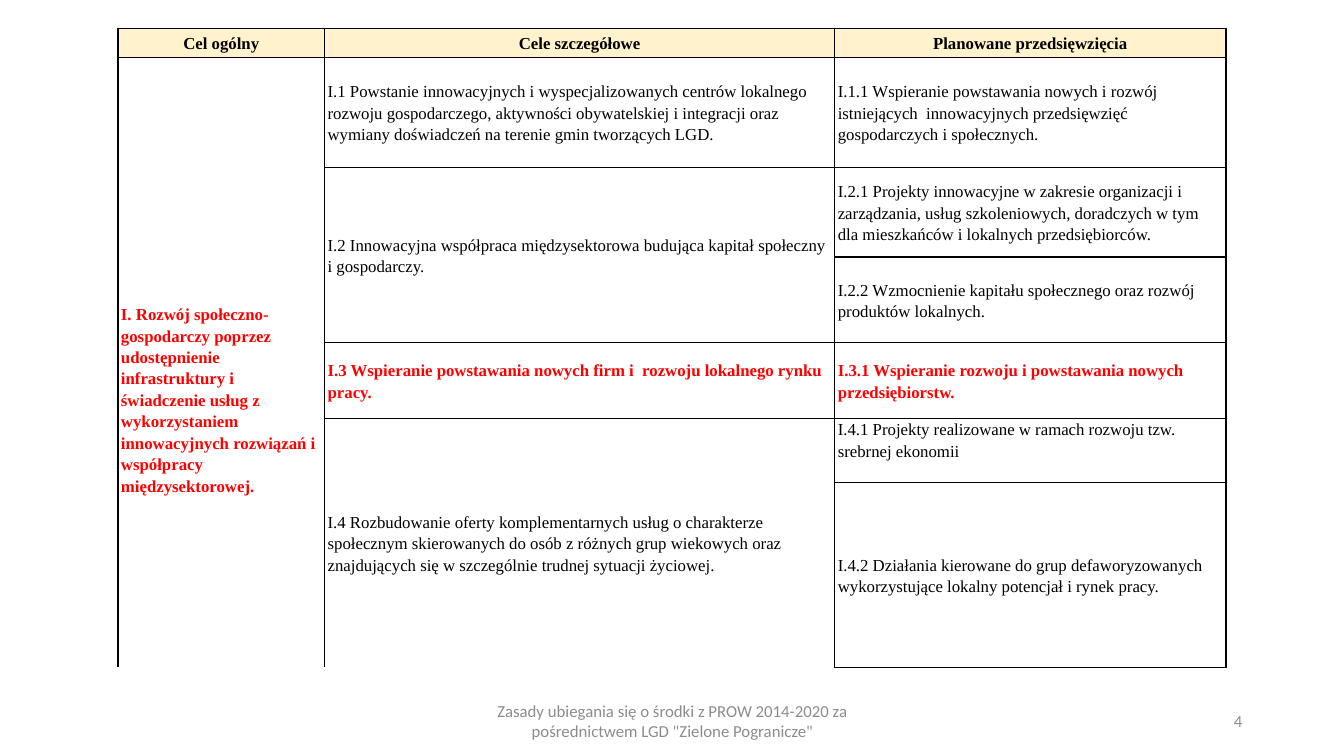
from dataclasses import dataclass

from lxml import etree
from pptx import Presentation
from pptx.dml.color import RGBColor
from pptx.enum.text import MSO_ANCHOR, PP_ALIGN
from pptx.oxml.ns import qn
from pptx.util import Inches, Pt

LEFT, CENTER, RIGHT = PP_ALIGN.LEFT, PP_ALIGN.CENTER, PP_ALIGN.RIGHT
TOP, MIDDLE, BOTTOM = MSO_ANCHOR.TOP, MSO_ANCHOR.MIDDLE, MSO_ANCHOR.BOTTOM


@dataclass(frozen=True)
class Theme:
    ink: str = "000000"
    accent: str = "FF0000"
    muted: str = "8C8C8C"
    head: str = "FFF2CC"
    body: str = "Times New Roman"
    foot: str = "Calibri"
    size: int = 12
    rule: int = 1
    leading: float = 1.15


THEME = Theme()
COLS = [2.05, 5.06, 3.88]
ROWS = [0.29, 1.09, 0.89, 0.85, 0.75, 0.64, 1.83]
ACCENTS = {(1, 0), (4, 1), (4, 2)}
ANCHORS = {(1, 0): BOTTOM, (5, 2): TOP}
GOAL_PAD = 1.7

# None continues the cell above it
GOALS = [
    ["Cel ogólny", "Cele szczegółowe", "Planowane przedsięwzięcia"],
    ["I. Rozwój społeczno-gospodarczy poprzez udostępnienie infrastruktury i "
     "świadczenie usług z wykorzystaniem innowacyjnych rozwiązań i współpracy "
     "międzysektorowej.",
     "I.1 Powstanie innowacyjnych i wyspecjalizowanych centrów lokalnego rozwoju "
     "gospodarczego, aktywności obywatelskiej i integracji oraz wymiany doświadczeń "
     "na terenie gmin tworzących LGD.",
     "I.1.1 Wspieranie powstawania nowych i rozwój istniejących  innowacyjnych "
     "przedsięwzięć gospodarczych i społecznych."],
    [None,
     "I.2 Innowacyjna współpraca międzysektorowa budująca kapitał społeczny i "
     "gospodarczy.",
     "I.2.1 Projekty innowacyjne w zakresie organizacji i zarządzania, usług "
     "szkoleniowych, doradczych w tym dla mieszkańców i lokalnych przedsiębiorców."],
    [None, None,
     "I.2.2 Wzmocnienie kapitału społecznego oraz rozwój produktów lokalnych."],
    [None,
     "I.3 Wspieranie powstawania nowych firm i  rozwoju lokalnego rynku pracy.",
     "I.3.1 Wspieranie rozwoju i powstawania nowych przedsiębiorstw."],
    [None,
     "I.4 Rozbudowanie oferty komplementarnych usług o charakterze społecznym "
     "skierowanych do osób z różnych grup wiekowych oraz znajdujących się w "
     "szczególnie trudnej sytuacji życiowej.",
     "I.4.1 Projekty realizowane w ramach rozwoju tzw. srebrnej ekonomii"],
    [None, None,
     "I.4.2 Działania kierowane do grup defaworyzowanych wykorzystujące lokalny "
     "potencjał i rynek pracy."],
]
FOOTER = ('Zasady ubiegania się o środki z PROW 2014-2020 za pośrednictwem '
          'LGD "Zielone Pogranicze"')


def apply(item, values):
    for name, value in values.items():
        setattr(item, name, value)


def write(frame, text, font, color, align, bold=False, leading=1.0):
    para = frame.paragraphs[0]
    apply(para, {"alignment": align, "line_spacing": leading})
    run = para.add_run()
    run.text = text
    apply(run.font, {"name": font, "size": Pt(THEME.size), "bold": bold})
    run.font.color.rgb = RGBColor.from_string(color)


def border(cell, sides):
    """Rule the given sides of a cell and clear the others."""
    props = cell._tc.get_or_add_tcPr()
    for i, side in enumerate("LRTB"):
        line = etree.Element(qn(f"a:ln{side}"), w=str(Pt(THEME.rule)))
        if side in sides:
            fill = etree.SubElement(line, qn("a:solidFill"))
            etree.SubElement(fill, qn("a:srgbClr"), val=THEME.ink)
        else:
            etree.SubElement(line, qn("a:noFill"))
        props.insert(i, line)


def edges(row, col):
    """Sides to rule: none inside a merged cell, none below the main goal."""
    sides = "LR"
    if GOALS[row][col] is not None:
        sides += "T"
    last = row == len(GOALS) - 1
    if (last and col > 0) or (not last and GOALS[row + 1][col] is not None):
        sides += "B"
    return sides


def merge(table):
    for col in range(len(COLS)):
        start = 0
        for row in range(1, len(ROWS) + 1):
            if row == len(ROWS) or GOALS[row][col] is not None:
                if row - start > 1:
                    table.cell(start, col).merge(table.cell(row - 1, col))
                start = row


def goal_table(slide, left, top):
    frame = slide.shapes.add_table(
        len(ROWS), len(COLS), Inches(left), Inches(top),
        Inches(sum(COLS)), Inches(sum(ROWS)))
    table = frame.table
    apply(table, {"first_row": False, "horz_banding": False})
    for col, width in zip(table.columns, COLS):
        col.width = Inches(width)
    for row, height in zip(table.rows, ROWS):
        row.height = Inches(height)
    merge(table)
    for r, texts in enumerate(GOALS):
        for c, text in enumerate(texts):
            cell = table.cell(r, c)
            head, key = r == 0, (r, c)
            apply(cell, {
                "margin_left": Inches(0.03), "margin_right": Inches(0.03),
                "margin_top": 0,
                "margin_bottom": Inches(GOAL_PAD if key == (1, 0) else 0),
                "vertical_anchor": ANCHORS.get(key, MIDDLE)})
            if head:
                cell.fill.solid()
                cell.fill.fore_color.rgb = RGBColor.from_string(THEME.head)
            else:
                cell.fill.background()
            border(cell, edges(r, c))
            if text is not None:
                hot = key in ACCENTS
                write(cell.text_frame, text, THEME.body,
                      THEME.accent if hot else THEME.ink,
                      CENTER if head else LEFT, head or hot, THEME.leading)


def foot_text(slide, text, left, top, width, align):
    box = slide.shapes.add_textbox(
        Inches(left), Inches(top), Inches(width), Inches(0.4))
    apply(box.text_frame, {"word_wrap": True, "vertical_anchor": MIDDLE})
    write(box.text_frame, text, THEME.foot, THEME.muted, align)


def main():
    deck = Presentation()
    apply(deck, {"slide_width": Inches(13.33), "slide_height": Inches(7.5)})
    slide = deck.slides.add_slide(deck.slide_layouts[6])
    goal_table(slide, 1.17, 0.28)
    foot_text(slide, "4", 9.42, 6.95, 3, RIGHT)
    foot_text(slide, FOOTER, 4.42, 6.95, 4.5, CENTER)
    deck.save("out.pptx")


if __name__ == "__main__":
    main()
